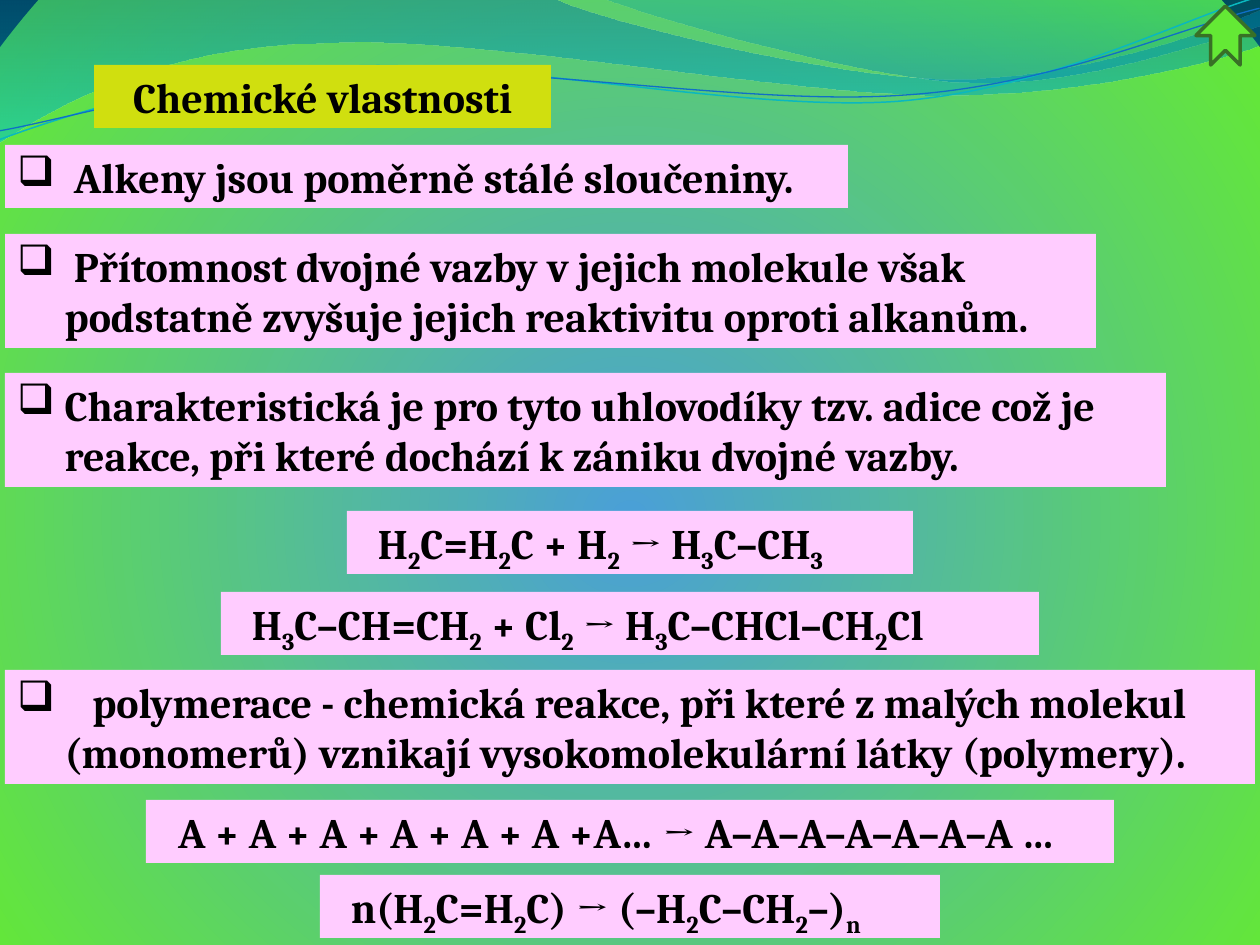
import copy
import math
import pptx
import pptx.util
import pptx.dml.color
import pptx.enum.shapes
import pptx.enum.text
import pptx.oxml
import pptx.oxml.ns

PX = 914400 // 126
W, H = 1260, 945
FONT = "Cambria"
PINK, LIME, BLACK = "FFCCFF", "D0DF0F", "000000"
BLUE, GREEN, NAVY = "4A9FD8", "64E935", "002A3F"
ALIGN = pptx.enum.text.PP_ALIGN
KIND = pptx.enum.shapes.MSO_SHAPE
qn = pptx.oxml.ns.qn


def emu(*vals):
    return [pptx.util.Emu(v * PX) for v in vals]


def color(code):
    return pptx.dml.color.RGBColor.from_string(code)


def add_xml(parent, tag, **attrs):
    node = parent.makeelement(qn(tag), attrs)
    parent.append(node)
    return node


def paint(part, fill=None, line=None, width=1):
    part.shadow.inherit = False
    if fill:
        part.fill.solid()
        part.fill.fore_color.rgb = color(fill)
    else:
        part.fill.background()
    if line:
        part.line.color.rgb = color(line)
        part.line.width = pptx.util.Pt(width)
    else:
        part.line.fill.background()


def blend(fill, stops):
    fill.gradient()
    for stop, code in zip(fill.gradient_stops, stops):
        stop.color.rgb = color(code)


def write(shape, text, align=ALIGN.LEFT, bullet=None, size=24):
    """Write one paragraph; an underscore lowers the next letter."""
    frame = shape.text_frame
    frame.word_wrap = True
    frame.auto_size = pptx.enum.text.MSO_AUTO_SIZE.NONE
    frame.vertical_anchor = pptx.enum.text.MSO_ANCHOR.TOP
    frame.margin_left = frame.margin_right = pptx.util.Inches(0.1)
    frame.margin_top = frame.margin_bottom = pptx.util.Inches(0.05)
    para = frame.paragraphs[0]
    para.alignment = align
    para.line_spacing = 1.0
    para.space_before = pptx.util.Pt(0)
    if bullet:
        props = para._p.get_or_add_pPr()
        indent = int(pptx.util.Pt(27))
        props.set("marL", str(indent))
        props.set("indent", str(-indent))
        add_xml(props, "a:buFont", typeface="Wingdings", charset="2")
        add_xml(props, "a:buChar", char=bullet)
    first, *rest = text.split("_")
    pieces = [(first, False)]
    for bit in rest:
        pieces += [(bit[0], True), (bit[1:], False)]
    for piece, low in pieces:
        if not piece:
            continue
        run = para.add_run()
        run.text = piece
        run.font.name, run.font.size, run.font.bold = FONT, pptx.util.Pt(size), True
        run.font.color.rgb = color(BLACK)
        if low:
            run._r.get_or_add_rPr().set("baseline", "-25000")


def outline(shapes, start, steps, closed=True):
    """Draw straight (2 numbers) and curved (6 numbers) steps."""
    dots = [step[i:i + 2] for step in steps for i in range(0, len(step), 2)]
    form = shapes.build_freeform(*start, scale=PX)
    form.add_line_segments(dots, close=closed)
    shape = form.convert_to_shape()
    # Join each three points of a curved step into one curve
    legs = iter(list(shape._element.iter(qn("a:lnTo"))))
    for step in steps:
        leg = next(legs)
        if len(step) == 6:
            curve = leg.makeelement(qn("a:cubicBezTo"), {})
            leg.addprevious(curve)
            for part in (leg, next(legs), next(legs)):
                curve.append(part[0])
                part.getparent().remove(part)
    return shape


def turn(nums, mid, angle):
    """Turn a flat list of x, y pairs clockwise about mid."""
    cos, sin = math.cos(math.radians(angle)), math.sin(math.radians(angle))
    out = []
    for x, y in zip(nums[::2], nums[1::2]):
        dx, dy = x - mid[0], y - mid[1]
        out += [mid[0] + dx * cos - dy * sin, mid[1] + dx * sin + dy * cos]
    return tuple(out)


def backdrop(slide):
    # Round glow, blue in the middle, navy beyond its rim
    fill = slide.background.fill
    blend(fill, [BLUE, GREEN])
    grad = slide._element.find(".//" + qn("a:gradFill"))
    rim = grad.find(qn("a:gsLst"))
    rim.append(copy.deepcopy(rim[-1]))
    fill.gradient_stops[2].color.rgb = color(NAVY)
    grad.remove(grad.find(qn("a:lin")))
    way = add_xml(grad, "a:path", path="circle")
    add_xml(way, "a:fillToRect", l="10000", t="110000", r="10000", b="100000")


def waves(slide):
    # Sheer bands: start, steps, colours, opacity
    bands = [
        ((0, 0), [(554, -1), (600, 21, 837, 79, 955, 79),
                  (1074, 79, 1207, 33, 1260, 11), (1261, 45),
                  (1239, 55, 1096, 96, 940, 95), (784, 95, 481, 35, 324, 43),
                  (163, 45, 58, 105, -1, 142), (0, 0)],
         ["0074A1", "00C6CF"], [45, 55]),
        ((604, -1), [(641, 14, 859, 78, 969, 82),
                     (1079, 87, 1211, 40, 1260, 26), (1260, 0), (604, -1)],
         ["00A1A9", "008BBF"], [30, 45]),
    ]
    for start, steps, codes, sheer in bands:
        band = outline(slide.shapes, start, steps)
        paint(band)
        blend(band.fill, codes)
        band.fill.gradient_angle = 270
        for node, part in zip(band._element.spPr.iter(qn("a:srgbClr")), sheer):
            add_xml(node, "a:alpha", val=str(part * 1000))
    # Thin curves, tilted together
    tilt = 2.7
    curves = [
        ((0, 140), [(60, 117, 199, 72, 349, 66), (497, 59, 747, 112, 898, 101),
                    (1050, 89, 1182, 19, 1257, -3)], (629, 72), "0AB8BF", 0.85),
        ((0, 131), [(59, 121, 207, 77, 357, 71), (508, 64, 752, 106, 903, 95),
                    (1053, 86, 1186, 26, 1260, 8)], (629, 74), "0F6FC6", 0.75),
    ]
    pair = slide.shapes.add_group_shape()
    for start, steps, mid, code, width in curves:
        flat = [turn(step, mid, tilt) for step in steps]
        curve = outline(pair.shapes, turn(start, mid, tilt), flat, closed=False)
        curve.rotation = 360 - tilt
        paint(curve, line=code, width=width)


def heading(slide, box):
    title = slide.shapes.title
    title.left, title.top, title.width, title.height = emu(*box)
    title.fill.solid()
    title.fill.fore_color.rgb = color(LIME)
    write(title, "Chemické vlastnosti", align=ALIGN.CENTER)
    # Bring the title in front of the waves
    tree = slide.shapes._spTree
    tree.remove(title._element)
    tree.append(title._element)


def panel(slide, box, text, **form):
    card = slide.shapes.add_shape(KIND.RECTANGLE, *emu(*box))
    paint(card, PINK)
    write(card, text, **form)


def facts(slide, left):
    rows = [
        (145, 843, 63, " Alkeny jsou poměrně stálé sloučeniny."),
        (234, 1091, 114, " Přítomnost dvojné vazby v jejich molekule však podstatně "
                         "zvyšuje jejich reaktivitu oproti alkanům."),
        (373, 1161, 114, "Charakteristická je pro tyto uhlovodíky tzv. adice což je "
                         "reakce, při které dochází k zániku dvojné vazby."),
        (670, 1250, 114, "   polymerace - chemická reakce, při které z malých molekul "
                         "(monomerů) vznikají vysokomolekulární látky (polymery)."),
    ]
    for top, wide, tall, text in rows:
        panel(slide, (left, top, wide, tall), text, bullet="q")


def formulas(slide, tall):
    rows = [
        (511, 566, "  H_2C=H_2C + H_2 → H_3C–CH_3", ALIGN.LEFT),
        (592, 818, "  H_3C–CH=CH_2 + Cl_2 → H_3C–CHCl–CH_2Cl", ALIGN.LEFT),
        (800, 968, "A + A + A + A + A + A +A… → A–A–A–A–A–A–A …   ", ALIGN.CENTER),
        (875, 620, "  n(H_2C=H_2C) → (–H_2C–CH_2–)_n", ALIGN.LEFT),
    ]
    for top, wide, text, align in rows:
        panel(slide, ((W - wide) // 2, top, wide, tall), text, align=align)


def arrow(slide, box):
    mark = slide.shapes.add_shape(KIND.NOTCHED_RIGHT_ARROW, *emu(*box))
    mark.rotation = 270
    paint(mark, GREEN, line="387026", width=2)


def main():
    deck = pptx.Presentation()
    deck.slide_width, deck.slide_height = emu(W, H)
    slide = deck.slides.add_slide(deck.slide_layouts[5])
    backdrop(slide)
    waves(slide)
    heading(slide, (94, 65, 457, 63))
    facts(slide, 5)
    formulas(slide, 63)
    arrow(slide, (1196, 6, 59, 59))
    deck.save("out.pptx")


if __name__ == "__main__":
    main()
